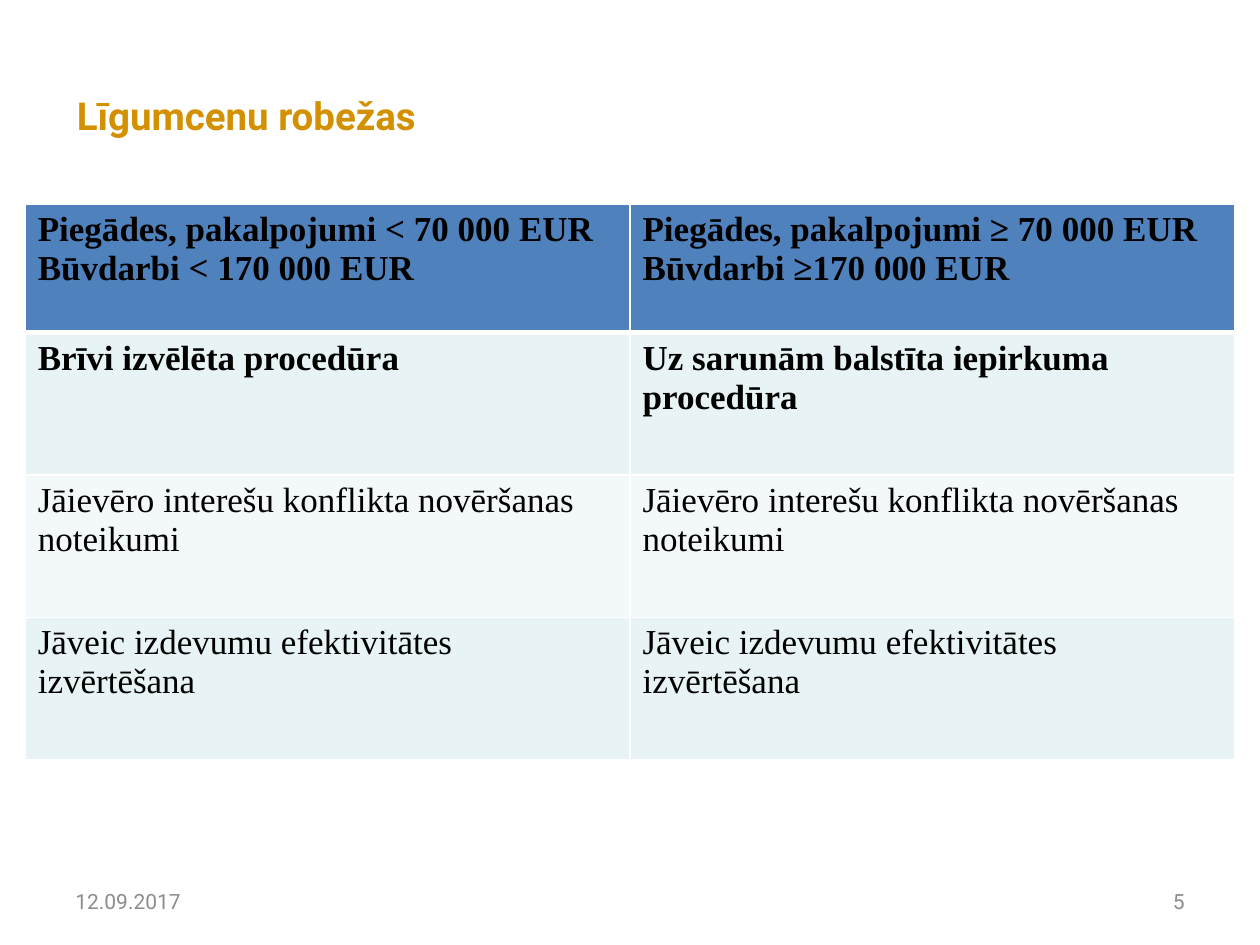
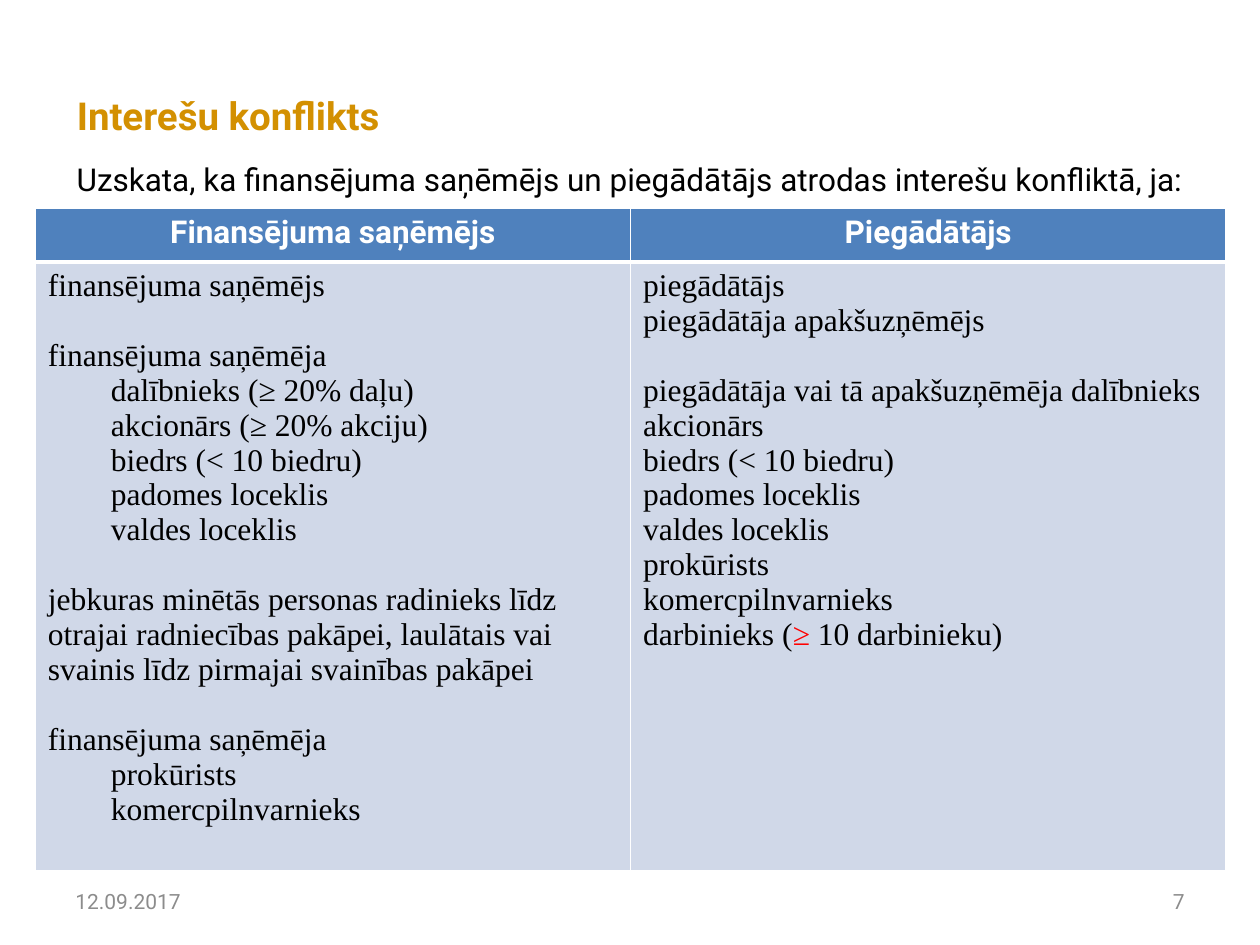
from pptx import Presentation
from pptx.dml.color import RGBColor
from pptx.enum import text as t
from pptx.oxml import parse_xml
from pptx.oxml.ns import nsdecls
from pptx.util import Inches, Pt

INK = {
    "gold": "D39001", "grey": "8C8C8C", "black": "000000", "white": "FFFFFF",
    "red": "FF0000", "blue": "4F81BD", "mist": "E7F3F4", "pale": "F3F9FA",
    "haze": "D0D8E8",
}
SANS, SERIF = "Roboto", "Times New Roman"
LEFT, MID, RIGHT = t.PP_ALIGN.LEFT, t.PP_ALIGN.CENTER, t.PP_ALIGN.RIGHT
DATE = "12.09.2017"


def hue(name):
    return RGBColor.from_string(INK[name])


class Deck:
    def __init__(self):
        self.prs = Presentation()
        self.prs.slide_width, self.prs.slide_height = Inches(10), Inches(7.5)
        self.slide = None

    def page(self, title, num):
        """Start a slide with its title and footer."""
        self.slide = self.prs.slides.add_slide(self.prs.slide_layouts[5])
        head = self.slide.shapes.title
        head.left, head.top = Inches(0.51), Inches(0.68)
        head.width, head.height = Inches(6.22), Inches(0.47)
        frame = head.text_frame
        frame.auto_size = t.MSO_AUTO_SIZE.NONE
        frame.vertical_anchor = t.MSO_ANCHOR.MIDDLE
        self.line(frame.paragraphs[0], title, 22, SANS, "gold", True)
        self.label(DATE, 0.5, 6.95, 2.33, 12, "grey")
        self.label(num, 7.17, 6.95, 2.33, 12, "grey", RIGHT)

    def line(self, para, runs, size, font, color, bold=False, align=LEFT):
        """Fill a paragraph from a string or from (text, colour) pairs."""
        para.alignment = align
        if isinstance(runs, str):
            runs = [(runs, color)]
        for words, tint in runs:
            run = para.add_run()
            run.text = words
            run.font.size, run.font.name = Pt(size), font
            run.font.bold = bold
            run.font.color.rgb = hue(tint)

    def label(self, words, x, y, w, size, color, align=LEFT):
        box = self.slide.shapes.add_textbox(
            Inches(x), Inches(y), Inches(w), Inches(0.4))
        frame = box.text_frame
        frame.word_wrap = True
        frame.vertical_anchor = t.MSO_ANCHOR.MIDDLE
        self.line(frame.paragraphs[0], words, size, SANS, color, align=align)

    def table(self, x, y, width, rows):
        """Add a table of equal columns; rows hold (height, fill, cells)."""
        cols = len(rows[0][2])
        high = sum(row[0] for row in rows)
        grid = self.slide.shapes.add_table(
            len(rows), cols, Inches(x), Inches(y),
            Inches(width), Inches(high)).table
        for r, (tall, fill, cells) in enumerate(rows):
            grid.rows[r].height = Inches(tall)
            for c, groups in enumerate(cells):
                cell = grid.cell(r, c)
                self.edge(cell, 3 if r == 1 else 1, 3 if r == 0 else 1)
                cell.fill.solid()
                cell.fill.fore_color.rgb = hue(fill)
                yield r, c, cell.text_frame, groups

    def edge(self, cell, top, low):
        """Draw white borders; the rule below the header is heavier."""
        props = cell._tc.get_or_add_tcPr()
        for side, wide in zip("LRTB", (1, 1, top, low)):
            props.append(parse_xml(
                f'<a:ln{side} {nsdecls("a")} w="{Pt(wide)}"><a:solidFill>'
                f'<a:srgbClr val="{INK["white"]}"/></a:solidFill></a:ln{side}>'))

    def fill(self, frame, groups, style, inset=0):
        """Write groups of lines, with one line of space between groups."""
        para = None
        for group in groups:
            for n, runs in enumerate(group):
                first = para is None
                para = frame.paragraphs[0] if first else frame.add_paragraph()
                if n == 0 and not first:
                    para.space_before = Pt(20)
                elif n and inset:
                    props = para._p.get_or_add_pPr()
                    props.set("marL", str(Inches(inset)))
                    props.set("indent", "0")
                self.line(para, runs, **style)


def limits(deck):
    deck.page("Līgumcenu robežas", "5")
    rules = [[["Jāievēro interešu konflikta novēršanas noteikumi"]]] * 2
    costs = [[["Jāveic izdevumu efektivitātes izvērtēšana"]]] * 2
    rows = [
        (1.02, "blue", [
            [["Piegādes, pakalpojumi < 70 000 EUR", "Būvdarbi < 170 000 EUR"]],
            [["Piegādes, pakalpojumi ≥ 70 000 EUR", "Būvdarbi ≥170 000 EUR"]]]),
        (1.13, "mist", [
            [["Brīvi izvēlēta procedūra"]],
            [["Uz sarunām balstīta iepirkuma procedūra"]]]),
        (1.13, "pale", rules),
        (1.13, "mist", costs),
    ]
    for r, c, frame, groups in deck.table(0.2, 1.62, 9.6, rows):
        deck.fill(frame, groups, dict(
            size=20, font=SERIF, color="black", bold=r < 2))


def clash(deck):
    deck.page("Interešu konflikts", "7")
    funded = [
        ["finansējuma saņēmējs"],
        ["finansējuma saņēmēja", "dalībnieks (≥ 20% daļu)",
         "akcionārs (≥ 20% akciju)", "biedrs (< 10 biedru)",
         "padomes loceklis", "valdes loceklis"],
        ["jebkuras minētās personas radinieks līdz otrajai radniecības "
         "pakāpei, laulātais vai svainis līdz pirmajai svainības pakāpei"],
        ["finansējuma saņēmēja", "prokūrists", "komercpilnvarnieks"],
    ]
    vendor = [
        ["piegādātājs", "piegādātāja apakšuzņēmējs"],
        ["piegādātāja vai tā apakšuzņēmēja dalībnieks", "akcionārs",
         "biedrs (< 10 biedru)", "padomes loceklis", "valdes loceklis",
         "prokūrists", "komercpilnvarnieks",
         [("darbinieks (", "black"), ("≥ ", "red"),
          ("10 darbinieku)", "black")]],
    ]
    rows = [
        (0.43, "blue", [[["Finansējuma saņēmējs"]], [["Piegādātājs"]]]),
        (4.66, "haze", [funded, vendor]),
    ]
    head = dict(size=18, font=SANS, color="white", bold=True, align=MID)
    body = dict(size=18, font=SERIF, color="black")
    for r, c, frame, groups in deck.table(0.28, 1.65, 9.45, rows):
        deck.fill(frame, groups, body if r else head, 0 if c else 0.5)
    deck.label("Uzskata, ka finansējuma saņēmējs un piegādātājs atrodas "
               "interešu konfliktā, ja:", 0.51, 1.22, 9.29, 18, "black")


def main():
    deck = Deck()
    limits(deck)
    clash(deck)
    deck.prs.save("out.pptx")


if __name__ == "__main__":
    main()
